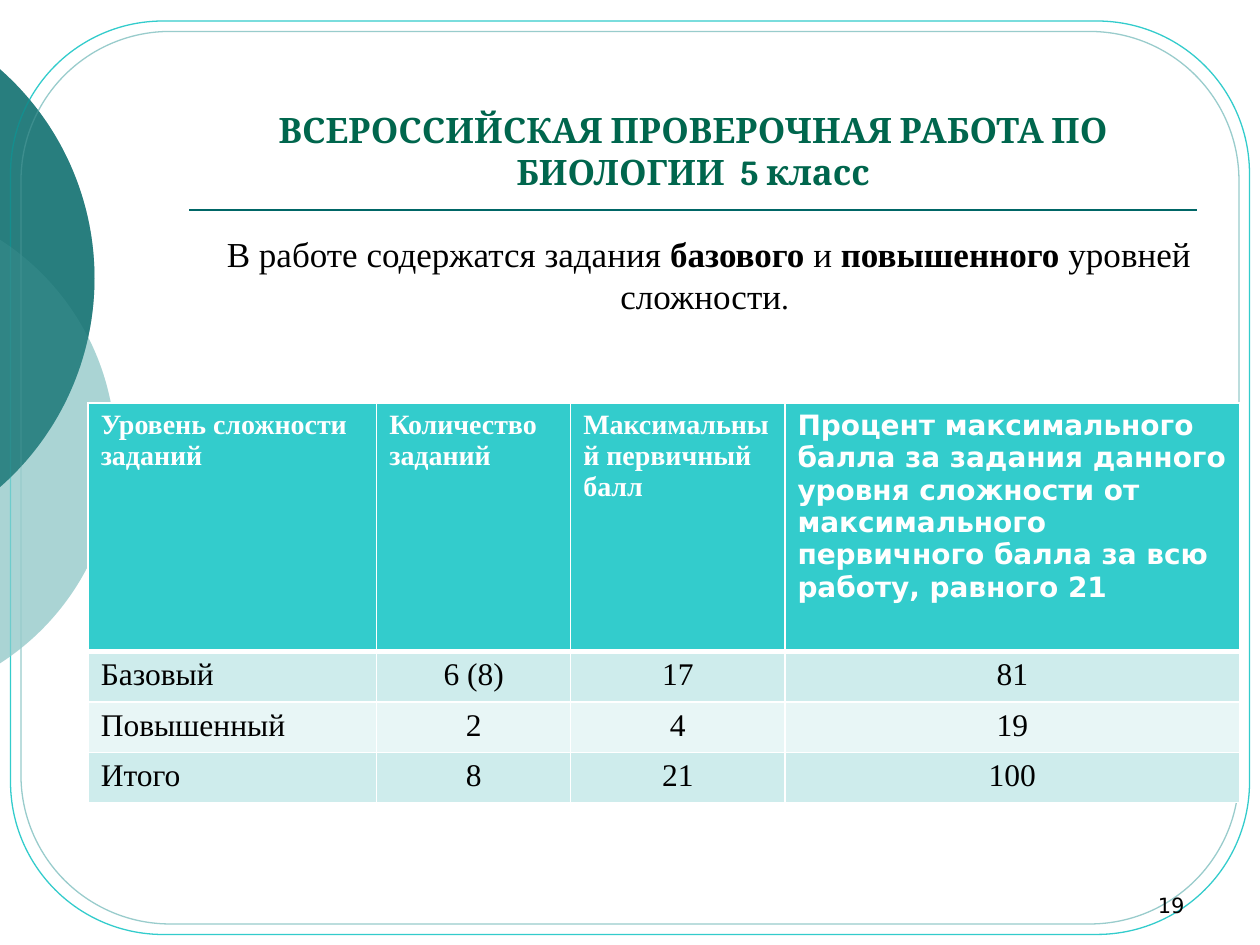
from math import acos, cos, sin, tan
from lxml import etree
from pptx import Presentation
from pptx import util as u
from pptx.dml.color import RGBColor
from pptx.enum import shapes, text
from pptx.oxml.ns import qn

THEME = {
    "deep": "006666", "pale": "99CCCC", "aqua": "33CCCC", "title": "00664D",
    "ink": "000000", "white": "FFFFFF", "bands": ("CEECEC", "E8F6F6"),
    "serif": "Times New Roman", "head": "Cambria", "sans": "DejaVu Sans",
    "big": 20, "cell": 18, "label": 16, "small": 12,
}
TITLE = "ВСЕРОССИЙСКАЯ ПРОВЕРОЧНАЯ РАБОТА ПО БИОЛОГИИ  5 класс"
INTRO = [  # words, bold, size
    ("В работе содержатся задания ", False, "big"),
    ("базового ", True, "big"),
    ("и", False, "big"),
    (" повышенного ", True, "big"),
    ("уровней сложности", False, "big"),
    (". ", False, "cell"),
]
PAGE = "19"
ROWS = [
    ("Уровень сложности заданий", "Количество заданий", "Максимальный первичный  балл",
     "Процент максимального балла за задания данного уровня сложности "
     "от максимального первичного балла за всю работу, равного 21"),
    ("Базовый", "6 (8)", "17", "81"),
    ("Повышенный", "2", "4", "19"),
    ("Итого", "8", "21", "100"),
]
COLS = (2.29, 1.54, 1.7, 3.61)
HIGH = (1.97, 0.4, 0.4, 0.4)
DISCS = [  # left, top, diameter, colour, opacity in percent
    (-37 / 12, 19 / 12, 4, "pale", 58),
    (-11 / 3, 0, 53 / 12, "deep", 60),
]
FRAMES = [((1 / 12, 1 / 6, 59 / 6, 7.25), "aqua"), ((1 / 6, 0.25, 29 / 3, 85 / 12), "pale")]


def rgb(name):
    return RGBColor.from_string(THEME.get(name, name))


def box(at):
    return [u.Inches(v) for v in at]


def write(par, words, face, size, tint, bold=False):
    run = par.add_run()
    run.text = words
    form = {"name": THEME[face], "size": u.Pt(THEME[size]), "bold": bold}
    for key, val in form.items():
        setattr(run.font, key, val)
    run.font.color.rgb = rgb(tint)


def label(slide, at, align, anchor):
    """Add an empty wrapped text box and return its first paragraph."""
    frame = slide.shapes.add_textbox(*box(at)).text_frame
    frame.word_wrap = True
    frame.vertical_anchor = anchor
    frame.paragraphs[0].alignment = align
    return frame.paragraphs[0]


def curve(path, rad, half):
    """Replace the path's outline by an arc of two Bezier curves and its chord."""
    pull = 4 / 3 * tan(half / 4)

    def spot(turn, bend=0):
        return (rad * (1 + cos(turn) - bend * sin(turn)),
                rad * (1 + sin(turn) + bend * cos(turn)))

    steps = [("moveTo", [spot(-half)])]
    for a, b in ((-half, 0), (0, half)):
        steps.append(("cubicBezTo", [spot(a, pull), spot(b, -pull), spot(b)]))
    steps += [("lnTo", [spot(-half)]), ("close", [])]
    for old in list(path):
        path.remove(old)
    for name, dots in steps:
        step = etree.SubElement(path, qn("a:" + name))
        for x, y in dots:
            etree.SubElement(step, qn("a:pt"), x=str(u.Inches(x)), y=str(u.Inches(y)))


def disc(slide, left, top, size, tint, alpha):
    """Draw the part of a circle that lies right of the slide's left edge."""
    x, y, d = box((left, top, size))
    form = slide.shapes.build_freeform(x, y)
    form.add_line_segments([(x + d, y), (x + d, y + d), (x, y + d)], close=True)
    part = form.convert_to_shape()
    rad = size / 2
    curve(part._element.find(".//" + qn("a:path")), rad, acos(-(left + rad) / rad))
    part.shadow.inherit = False
    part.line.fill.background()
    part.fill.solid()
    part.fill.fore_color.rgb = rgb(tint)
    hue = part.fill._xPr.find(qn("a:solidFill"))[0]
    etree.SubElement(hue, qn("a:alpha"), val=str(alpha * 1000))


def discs(slide):
    for item in DISCS:
        disc(slide, *item)


def frames(slide):
    for at, tint in FRAMES:
        rim = slide.shapes.add_shape(shapes.MSO_SHAPE.ROUNDED_RECTANGLE, *box(at))
        rim.adjustments[0] = 0.167
        rim.shadow.inherit = False
        rim.fill.background()
        rim.line.color.rgb = rgb(tint)
        rim.line.width = u.Pt(0.75)


def rule(slide):
    line = slide.shapes.add_connector(
        shapes.MSO_CONNECTOR.STRAIGHT, *box((1.5, 5 / 3, 9.5, 5 / 3)))
    line.line.color.rgb = rgb("deep")
    line.line.width = u.Pt(1)
    etree.SubElement(line._element.spPr, qn("a:effectLst"))


def edge(cell, widths):
    """Give the cell white borders, widths in points by side."""
    props = cell._tc.get_or_add_tcPr()
    for spot, (side, wide) in enumerate(widths.items()):
        line = etree.Element(qn("a:ln" + side), w=str(u.Pt(wide)))
        fill = etree.SubElement(line, qn("a:solidFill"))
        etree.SubElement(fill, qn("a:srgbClr"), val=THEME["white"])
        props.insert(spot, line)


def grid(slide):
    at = (0.7, 3.2, sum(COLS), sum(HIGH))
    table = slide.shapes.add_table(len(ROWS), len(COLS), *box(at)).table
    for col, wide in zip(table.columns, COLS):
        col.width = u.Inches(wide)
    for r, row in enumerate(ROWS):
        table.rows[r].height = u.Inches(HIGH[r])
        top = r == 0
        for c, words in enumerate(row):
            cell = table.cell(r, c)
            cell.fill.solid()
            cell.fill.fore_color.rgb = rgb("aqua" if top else THEME["bands"][(r - 1) % 2])
            edge(cell, {"L": 1, "R": 1, "T": 3 if r == 1 else 1, "B": 3 if top else 1})
            par = cell.text_frame.paragraphs[0]
            if top:
                face = "sans" if c == len(COLS) - 1 else "serif"
                write(par, words, face, "label", "white", True)
            else:
                if c:
                    par.alignment = text.PP_ALIGN.CENTER
                write(par, words, "serif", "cell", "ink")


def main():
    deck = Presentation()
    deck.slide_width, deck.slide_height = u.Inches(10), u.Inches(7.5)
    slide = deck.slides.add_slide(deck.slide_layouts[6])
    mid, right = text.PP_ALIGN.CENTER, text.PP_ALIGN.RIGHT
    high, low = text.MSO_ANCHOR.TOP, text.MSO_ANCHOR.BOTTOM

    discs(slide)
    frames(slide)
    rule(slide)
    discs(slide)  # a second layer deepens the tint and covers the frames
    write(label(slide, (1.5, 0.33, 8, 1.25), mid, low), TITLE, "head", "big", "title", True)
    write(label(slide, (7.17, 6.83, 2.33, 0.5), right, low), PAGE, "sans", "small", "ink")
    intro = label(slide, (1.25, 1.8, 8.75, 0.77), mid, high)
    for words, bold, size in INTRO:
        write(intro, words, "serif", size, "ink", bold)
    grid(slide)
    deck.save("out.pptx")


if __name__ == "__main__":
    main()
